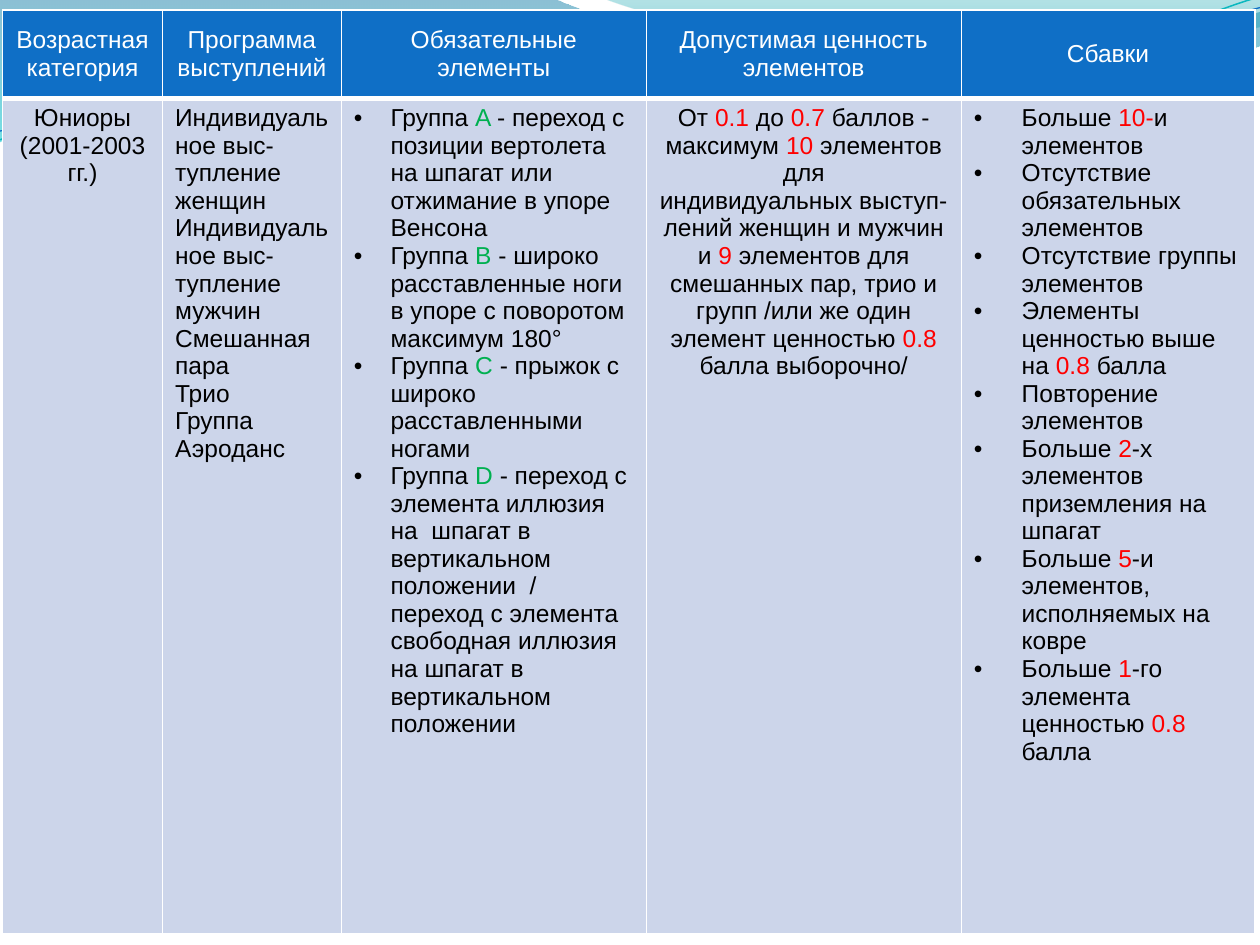
import math

from pptx import Presentation
from pptx import util as u
from pptx.dml.color import RGBColor
from pptx.enum import text
from pptx.oxml.ns import qn
from lxml import etree

WHITE = RGBColor(0xFF, 0xFF, 0xFF)
BLACK = RGBColor(0x00, 0x00, 0x00)
RED = RGBColor(0xFF, 0x00, 0x00)
GREEN = RGBColor(0x00, 0xB0, 0x50)
BLUE = RGBColor(0x0F, 0x6F, 0xC6)
PALE_BLUE = RGBColor(0xCC, 0xD5, 0xEA)
TURQUOISE = RGBColor(0x0A, 0xB8, 0xBF)
DEEP_BLUE = RGBColor(0x00, 0x74, 0xA1)
CYAN = RGBColor(0x00, 0xC6, 0xCF)
TEAL = RGBColor(0x00, 0xA1, 0xA9)
SEA_BLUE = RGBColor(0x00, 0x8B, 0xBF)

CENTER = text.PP_ALIGN.CENTER
LEFT = text.PP_ALIGN.LEFT
HARD_SPACE = chr(160)


class SlideBuilder:
    font = "Arial"
    size = u.Pt(14)

    def __init__(self, slide):
        self.slide = slide

    def outline(self, box, start, segments, close=False, rotation=0):
        """Freeform of straight (2 numbers) and cubic (6 numbers) segments."""
        left, top, width, height = box
        middle_x, middle_y = left + width / 2, top + height / 2
        cosine = math.cos(math.radians(rotation))
        sine = math.sin(math.radians(rotation))

        builder = self.slide.shapes.build_freeform(0, 0, scale=1.0)
        builder.add_line_segments([(u.Inches(width), u.Inches(height))], close=close)
        shape = builder.convert_to_shape(u.Inches(left), u.Inches(top))
        shape.left, shape.top, shape.width, shape.height = map(u.Inches, box)
        shape.rotation = rotation
        shape.shadow.inherit = False

        # Replace the straight segment by the curves, turned back into the box
        outline = next(shape.element.iter(qn("a:path")))
        for child in list(outline):
            outline.remove(child)
        outline.set("w", str(shape.width))
        outline.set("h", str(shape.height))
        steps = [("moveTo", start)]
        steps += [("lnTo" if len(s) == 2 else "cubicBezTo", s) for s in segments]
        for kind, numbers in steps:
            step = etree.SubElement(outline, qn(f"a:{kind}"))
            for x, y in zip(numbers[::2], numbers[1::2]):
                x, y = x - middle_x, y - middle_y
                etree.SubElement(
                    step, qn("a:pt"),
                    x=str(u.Inches(x * cosine + y * sine + width / 2)),
                    y=str(u.Inches(y * cosine - x * sine + height / 2)))
        if close:
            etree.SubElement(outline, qn("a:close"))
        return shape

    def wave(self, box, start, segments, stops):
        shape = self.outline(box, start, segments, close=True)
        shape.line.fill.background()
        shape.fill.gradient()
        shape.fill.gradient_angle = 270
        for stop, (position, color, opacity) in zip(shape.fill.gradient_stops, stops):
            stop.position = position
            stop.color.rgb = color
        colors = shape.element.spPr.iter(qn("a:srgbClr"))
        for color, (position, rgb, opacity) in zip(colors, stops):
            etree.SubElement(color, qn("a:alpha"), val=str(opacity * 1000))

    def curve(self, box, start, segments, color, width):
        shape = self.outline(box, start, segments, rotation=357.3)
        shape.fill.background()
        shape.line.color.rgb = color
        shape.line.width = u.Pt(width)

    def table(self, left, top, widths, heights):
        frame = self.slide.shapes.add_table(
            len(heights), len(widths), u.Inches(left), u.Inches(top),
            u.Inches(sum(widths)), u.Inches(sum(heights)))
        for column, width in zip(frame.table.columns, widths):
            column.width = u.Inches(width)
        for row, height in zip(frame.table.rows, heights):
            row.height = u.Inches(height)
        return frame.table

    def cell(self, cell, paragraphs, fill, color, borders, align=LEFT, indent=0):
        properties = cell._tc.get_or_add_tcPr()
        for side, width in zip("LRTB", borders):
            line = etree.SubElement(properties, qn(f"a:ln{side}"), w=str(u.Pt(width)))
            solid = etree.SubElement(line, qn("a:solidFill"))
            etree.SubElement(solid, qn("a:srgbClr"), val=str(WHITE))
        cell.fill.solid()
        cell.fill.fore_color.rgb = fill
        frame = cell.text_frame
        for index, pieces in enumerate(paragraphs):
            paragraph = frame.add_paragraph() if index else frame.paragraphs[0]
            paragraph.alignment = align
            if indent:
                self.bullet(paragraph, indent)
            for piece in pieces:
                self.run(paragraph, piece, color)

    def bullet(self, paragraph, indent):
        properties = paragraph._p.get_or_add_pPr()
        properties.set("marL", str(u.Inches(indent)))
        properties.set("indent", str(-u.Inches(indent)))
        etree.SubElement(properties, qn("a:buFont"), typeface=self.font)
        etree.SubElement(properties, qn("a:buChar"), char="•")

    def run(self, paragraph, piece, color):
        wording, color = piece if isinstance(piece, tuple) else (piece, color)
        for index, line in enumerate(wording.split("\n")):
            if index:
                paragraph.add_line_break()
            run = paragraph.add_run()
            run.text = line
            run.font.name = self.font
            run.font.size = self.size
            run.font.bold = False
            run.font.color.rgb = color


HEADERS = ["Возрастная категория", "Программа выступлений", "Обязательные элементы",
           "Допустимая ценность элементов", "Сбавки"]

AGE = [["Юниоры\n(2001-2003 гг.)"]]
PROGRAMME = [
    [" ".join(f"Индивидуальное{HARD_SPACE}выс-тупление {who}" for who in ("женщин", "мужчин"))],
    ["Смешанная пара"], ["Трио"], ["Группа"], ["Аэроданс"],
]
REQUIRED = [["Группа ", (letter, GREEN), wording] for letter, wording in (
    ("A ", "- переход с позиции вертолета на шпагат или отжимание в упоре Венсона"),
    ("B ", "- широко расставленные ноги в упоре с поворотом максимум 180°"),
    ("C", " - прыжок с широко расставленными ногами"),
    ("D ", "- переход с элемента иллюзия на  шпагат в вертикальном положении  / "
           "переход с элемента свободная иллюзия на шпагат в вертикальном положении"),
)]
VALUE = [
    ["От ", ("0.1", RED), " до ", ("0.7", RED), " баллов -"],
    ["максимум ", ("10", RED),
     f" элементов для индивидуальных{HARD_SPACE}выступ-лений женщин и мужчин и ", ("9 ", RED),
     "элементов для смешанных пар, трио и групп /или же один элемент ценностью ",
     ("0.8", RED), " балла выборочно/"],
]
DEDUCTIONS = [
    ["Больше ", ("10-", RED), "и элементов"],
    ["Отсутствие обязательных элементов"],
    ["Отсутствие группы элементов"],
    ["Элементы ценностью выше на ", ("0.8", RED), " балла"],
    ["Повторение элементов"],
    ["Больше ", ("2", RED), "-х элементов приземления на шпагат"],
    ["Больше ", ("5", RED), "-и элементов, исполняемых на ковре"],
    ["Больше ", ("1", RED), "-го элемента ценностью ", ("0.8", RED), " балла"],
]
# Paragraphs, alignment and bullet indent of each body column
BODY = [(AGE, CENTER, 0), (PROGRAMME, LEFT, 0), (REQUIRED, LEFT, 0.29),
        (VALUE, CENTER, 0), (DEDUCTIONS, LEFT, 0.38)]


def main():
    presentation = Presentation()
    presentation.slide_width = u.Inches(10)
    presentation.slide_height = u.Inches(7.5)
    builder = SlideBuilder(presentation.slides.add_slide(presentation.slide_layouts[6]))

    # Waves along the top edge
    builder.wave((-0.01, -0.01, 10.02, 1.14), (0, 0), [
        (4.4, -0.01), (4.76, 0.17, 6.64, 0.63, 7.58, 0.63),
        (8.53, 0.63, 9.58, 0.26, 10, 0.09), (10.01, 0.36),
        (9.83, 0.44, 8.7, 0.76, 7.46, 0.75), (6.22, 0.75, 3.82, 0.28, 2.57, 0.34),
        (1.29, 0.36, 0.46, 0.83, -0.01, 1.13), (0, 0)],
        [(0, DEEP_BLUE, 45), (1, CYAN, 55)])
    builder.wave((4.79, -0.01, 5.21, 0.7), (4.79, -0.01), [
        (5.09, 0.11, 6.82, 0.62, 7.69, 0.65), (8.56, 0.69, 9.61, 0.32, 10, 0.21),
        (10, 0), (4.79, -0.01)],
        [(0, TEAL, 30), (0.8, SEA_BLUE, 45)])
    builder.curve((-0.02, 0.22, 10.02, 0.71), (0, 1.11), [
        (0.48, 0.93, 1.58, 0.57, 2.77, 0.52), (3.95, 0.47, 5.93, 0.89, 7.13, 0.8),
        (8.33, 0.71, 9.38, 0.15, 9.98, -0.02)], TURQUOISE, 0.85)
    builder.curve((-0.02, 0.3, 10.03, 0.58), (0, 1.04), [
        (0.47, 0.96, 1.64, 0.61, 2.83, 0.56), (4.03, 0.51, 5.97, 0.84, 7.17, 0.75),
        (8.36, 0.67, 9.41, 0.21, 10, 0.06)], BLUE, 0.75)

    # Requirements table
    table = builder.table(0.02, 0.08, [1.27, 1.42, 2.42, 2.5, 2.33], [0.7, 6.63])
    for column, header in enumerate(HEADERS):
        cell = table.cell(0, column)
        builder.cell(cell, [[header]], BLUE, WHITE, (1, 1, 1, 3), CENTER)
        cell.vertical_anchor = text.MSO_ANCHOR.MIDDLE
    for column, (paragraphs, align, indent) in enumerate(BODY):
        builder.cell(table.cell(1, column), paragraphs, PALE_BLUE, BLACK,
                     (1, 1, 3, 1), align, indent)

    presentation.save("out.pptx")


if __name__ == "__main__":
    main()
